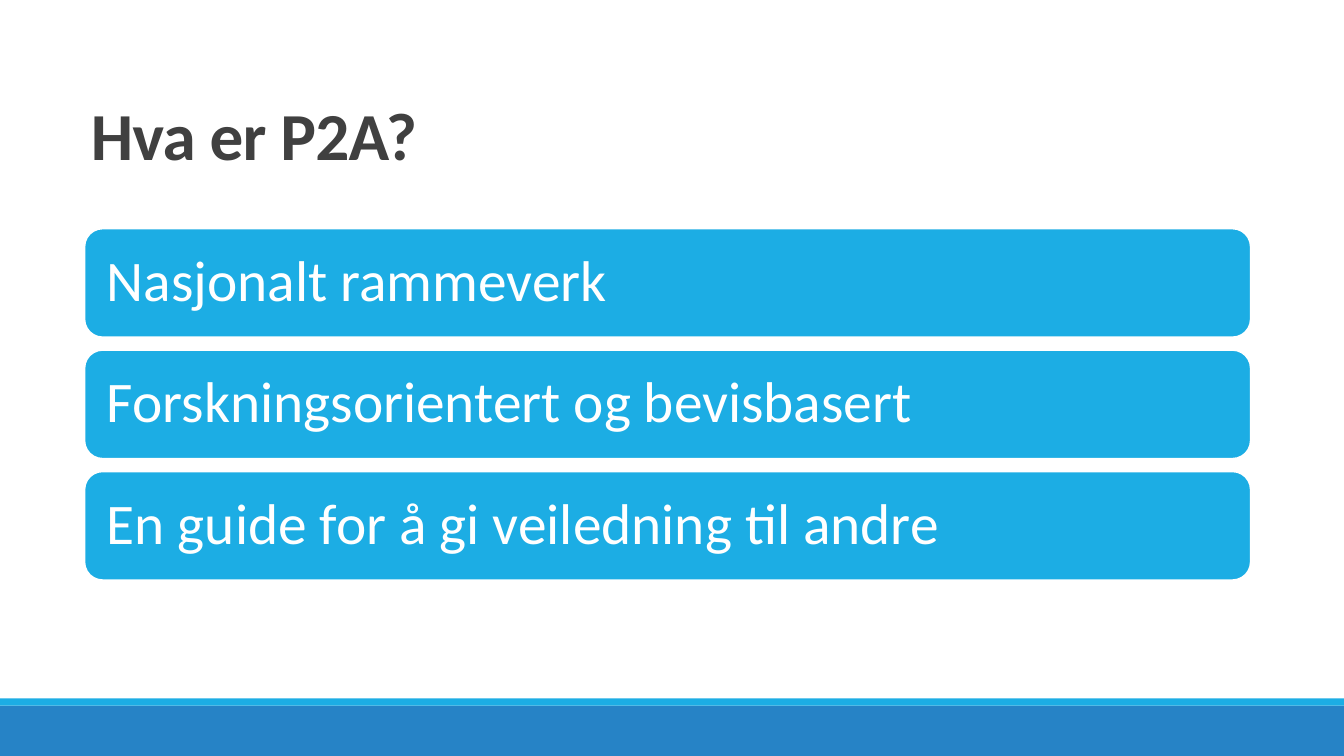
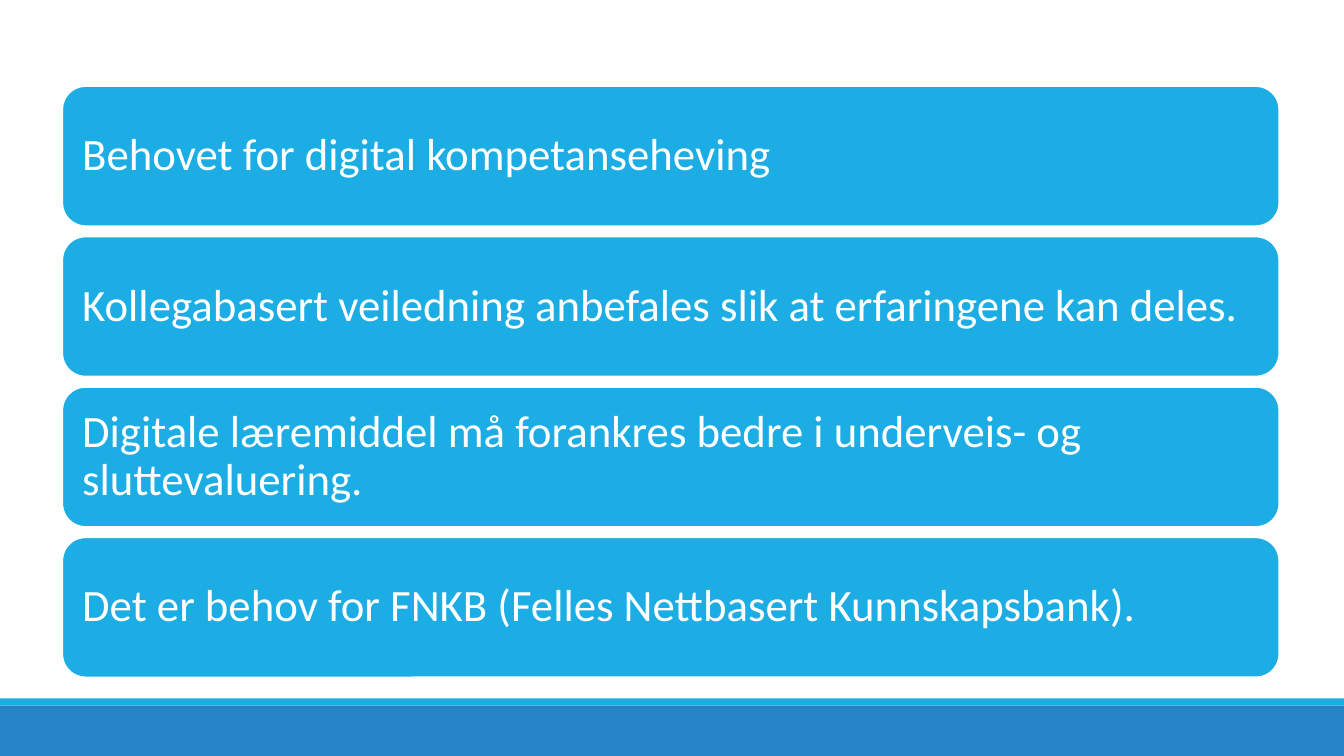
from pptx import Presentation
from pptx.dml.color import RGBColor
from pptx.enum.shapes import MSO_SHAPE
from pptx.enum.text import MSO_ANCHOR, PP_ALIGN
from pptx.util import Cm, Pt

COLORS = {
    "band": "2683C6",
    "accent": "1CADE4",
    "title": "404040",
    "white": "FFFFFF",
}
FONT = "Calibri"
SLIDE_WIDTH, SLIDE_HEIGHT = 33.87, 19.05

FRAMEWORK_POINTS = [
    "Nasjonalt rammeverk",
    "Forskningsorientert og bevisbasert",
    "En guide for å gi veiledning til andre",
]
NEEDS = [
    "Behovet for digital kompetanseheving",
    "Kollegabasert veiledning anbefales slik at erfaringene kan deles.",
    "Digitale læremiddel må forankres bedre i underveis- og sluttevaluering.",
    "Det er behov for FNKB (Felles Nettbasert Kunnskapsbank).",
]


def rgb(name):
    return RGBColor.from_string(COLORS[name])


def add_box(slide, kind, left, top, width, height, fill):
    """Add a filled shape without outline or shadow."""
    shape = slide.shapes.add_shape(kind, Cm(left), Cm(top), Cm(width), Cm(height))
    shape.shadow.inherit = False
    shape.fill.solid()
    shape.fill.fore_color.rgb = rgb(fill)
    shape.line.fill.background()
    return shape


def write_text(shape, text, size, color, anchor, inset, spacing, bold=False):
    """Fill a shape with one left-aligned paragraph; inset is (sides, ends) in cm."""
    frame = shape.text_frame
    frame.word_wrap = True
    frame.vertical_anchor = anchor
    frame.margin_left = frame.margin_right = Cm(inset[0])
    frame.margin_top = frame.margin_bottom = Cm(inset[1])
    paragraph = frame.paragraphs[0]
    paragraph.alignment = PP_ALIGN.LEFT
    paragraph.line_spacing = spacing
    run = paragraph.add_run()
    run.text = text
    run.font.name = FONT
    run.font.size = Pt(size)
    run.font.bold = bold
    run.font.color.rgb = rgb(color)
    return run


def add_title(slide, text):
    title = slide.shapes.add_textbox(Cm(2.29), Cm(2.06), Cm(24.4), Cm(2.46))
    run = write_text(title, text, 48, "title", MSO_ANCHOR.BOTTOM, (0, 0.13), 0.85, bold=True)
    run.font._element.set("spc", "-50")  # tighter letter spacing


def add_cards(slide, texts, left, top, width, height, gap, size, inset):
    """Stack equal rounded cards with a constant gap."""
    for index, text in enumerate(texts):
        card = add_box(slide, MSO_SHAPE.ROUNDED_RECTANGLE,
                       left, top + index * (height + gap), width, height, "accent")
        card.line.color.rgb = rgb("white")
        card.line.width = Pt(1.25)
        write_text(card, text, size, "white", MSO_ANCHOR.MIDDLE, (inset, inset), 0.9)


def add_slide(presentation):
    """Add a blank slide with the shared bands along the bottom."""
    slide = presentation.slides.add_slide(presentation.slide_layouts[6])
    band_top, stripe = 17.78, 0.18
    add_box(slide, MSO_SHAPE.RECTANGLE, 0, band_top,
            SLIDE_WIDTH, SLIDE_HEIGHT - band_top, "band")
    add_box(slide, MSO_SHAPE.RECTANGLE, 0, band_top - stripe,
            SLIDE_WIDTH, stripe, "accent")
    return slide


def main():
    presentation = Presentation()
    presentation.slide_width = Cm(SLIDE_WIDTH)
    presentation.slide_height = Cm(SLIDE_HEIGHT)

    # What P2A is
    slide = add_slide(presentation)
    add_title(slide, "Hva er P2A?")
    add_cards(slide, FRAMEWORK_POINTS, left=2.13, top=5.76, width=29.39,
              height=2.74, gap=0.32, size=41, inset=0.43)

    # Needs
    slide = add_slide(presentation)
    add_cards(slide, NEEDS, left=1.57, top=2.17, width=30.67,
              height=3.53, gap=0.26, size=32, inset=0.33)

    presentation.save("out.pptx")


if __name__ == "__main__":
    main()
